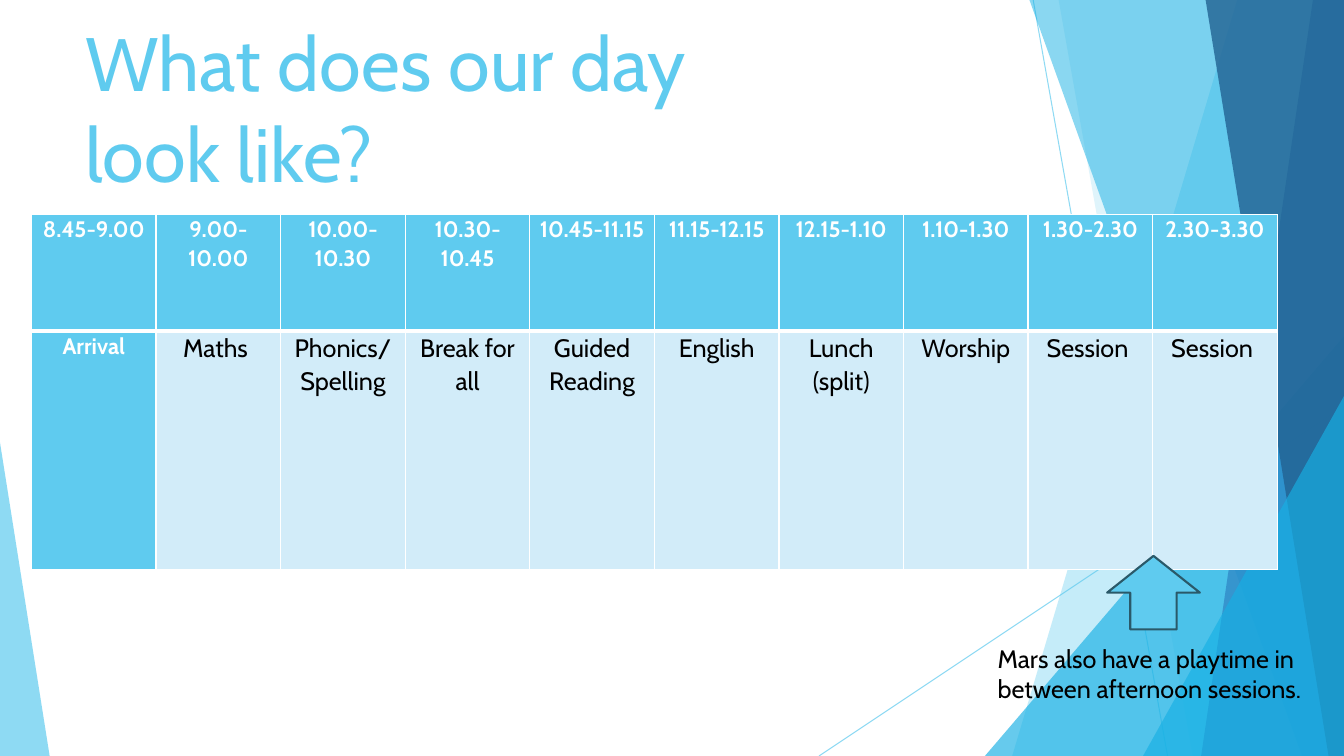
from lxml import etree
from pptx import Presentation
from pptx import util as u
from pptx.dml import color
from pptx.enum import shapes, text
from pptx.oxml import ns

COLORS = {
    "sky": "5FCBEF", "cyan": "17B0E4", "blue": "2E83C3", "navy": "226292",
    "pale": "D2ECF9", "outline": "2A5969", "white": "FFFFFF", "black": "000000",
}
FONT = "Cabin"
WIDTH, HEIGHT = 960, 540

# Facet bands: x at top left, x at bottom left, colour, opacity
WIDE_BANDS = [(884, 723, "sky", 36), (756, 852, "sky", 20)]
NARROW_BANDS = [(735, 930, "cyan", 50), (938, 858, "blue", 70), (861, 949, "navy", 80)]

TIMETABLE = [
    ("8.45-9.00", "Arrival"), ("9.00-10.00", "Maths "),
    ("10.00-10.30", "Phonics/ Spelling"), ("10.30-10.45", "Break for all"),
    ("10.45-11.15", "Guided Reading"), ("11.15-12.15", "English"),
    ("12.15-1.10", "Lunch (split)"), ("1.10-1.30", "Worship"),
    ("1.30-2.30", "Session "), ("2.30-3.30", "Session "),
]


def rgb(name):
    return color.RGBColor.from_string(COLORS[name])


class SlideBuilder:
    def __init__(self, slide):
        self.slide = slide
        self.shapes = slide.shapes

    def paint(self, shape, name, opacity=100):
        shape.fill.solid()
        shape.fill.fore_color.rgb = rgb(name)
        if opacity < 100:
            self.set_opacity(shape._element.spPr, opacity)

    def set_opacity(self, parent, opacity):
        color_element = next(parent.iter(ns.qn("a:srgbClr")))
        etree.SubElement(color_element, ns.qn("a:alpha"), val=str(opacity * 1000))

    def line(self, start, end):
        connector = self.shapes.add_connector(
            shapes.MSO_CONNECTOR.STRAIGHT, *map(u.Pt, start + end))
        connector.line.color.rgb = rgb("sky")
        connector.line.width = u.Pt(0.75)
        properties = connector._element.spPr
        self.set_opacity(properties, 70)
        etree.SubElement(properties, ns.qn("a:effectLst"))

    def band(self, top_x, bottom_x, name, opacity):
        """Draw a full-height facet reaching the right edge of the slide."""
        builder = self.shapes.build_freeform(top_x, -1, scale=u.Pt(1))
        builder.add_line_segments([(WIDTH, -1), (WIDTH, HEIGHT), (bottom_x, HEIGHT)])
        shape = builder.convert_to_shape()
        shape.shadow.inherit = False
        self.paint(shape, name, opacity)
        shape.line.fill.background()

    def preset(self, kind, box, name, opacity=100):
        shape = self.shapes.add_shape(kind, *map(u.Pt, box))
        shape.shadow.inherit = False
        self.paint(shape, name, opacity)
        shape.line.fill.background()
        return shape

    def triangle(self, box, apex, name, opacity):
        shape = self.preset(shapes.MSO_SHAPE.ISOSCELES_TRIANGLE, box, name, opacity)
        shape.adjustments[0] = apex

    def up_arrow(self, box):
        shape = self.preset(shapes.MSO_SHAPE.RIGHT_ARROW, box, "sky")
        shape.rotation = 270
        shape.line.color.rgb = rgb("outline")
        shape.line.width = u.Pt(1.5)

    def add_text(self, paragraph, words, size, name, bold=False):
        run = paragraph.add_run()
        run.text = words
        run.font.name = FONT
        run.font.size = u.Pt(size)
        run.font.bold = bold
        run.font.color.rgb = rgb(name)

    def text_box(self, box, words, size, name):
        frame = self.shapes.add_textbox(*map(u.Pt, box)).text_frame
        frame.word_wrap = True
        self.add_text(frame.paragraphs[0], words, size, name)

    def borders(self, cell, **widths):
        """Add white borders; the fill must already be set."""
        properties = cell._tc.get_or_add_tcPr()
        for index, (side, width) in enumerate(widths.items()):
            line = etree.Element(ns.qn(f"a:ln{side}"), w=str(u.Pt(width)))
            fill = etree.SubElement(line, ns.qn("a:solidFill"))
            etree.SubElement(fill, ns.qn("a:srgbClr"), val=COLORS["white"])
            properties.insert(index, line)

    def cell(self, cell, words, strong, top, bottom):
        cell.margin_left = cell.margin_right = u.Pt(5.4)
        cell.margin_top = cell.margin_bottom = 0
        self.paint(cell, "sky" if strong else "pale")
        self.borders(cell, L=1, R=1, T=top, B=bottom)
        paragraph = cell.text_frame.paragraphs[0]
        paragraph.alignment = text.PP_ALIGN.CENTER
        paragraph.line_spacing = 1.07
        if strong:
            self.add_text(paragraph, words, 16, "white", bold=True)
        else:
            self.add_text(paragraph, words, 18, "black")

    def timetable(self, left, top, column_width, row_heights):
        count = len(TIMETABLE)
        table = self.shapes.add_table(
            2, count, u.Pt(left), u.Pt(top),
            u.Pt(column_width * count), u.Pt(sum(row_heights))).table
        table.horz_banding = False
        for row, height in zip(table.rows, row_heights):
            row.height = u.Pt(height)
        for index, (time, activity) in enumerate(TIMETABLE):
            table.columns[index].width = u.Pt(column_width)
            self.cell(table.cell(0, index), time, True, top=1, bottom=3)
            self.cell(table.cell(1, index), activity, index == 0, top=3, bottom=1)


def main():
    presentation = Presentation()
    presentation.slide_width = u.Pt(WIDTH)
    presentation.slide_height = u.Pt(HEIGHT)
    builder = SlideBuilder(presentation.slides.add_slide(presentation.slide_layouts[6]))

    builder.line((738, 0), (834, HEIGHT))
    builder.line((WIDTH, 290), (585, HEIGHT))
    for band in WIDE_BANDS:
        builder.band(*band)
    builder.triangle((703.5, 240, 256.5, 300), 1, "cyan", 66)
    for band in NARROW_BANDS:
        builder.band(*band)
    builder.triangle((816.5, 283, 143.5, 257), 1, "cyan", 66)
    builder.triangle((0, 316, 35.5, 224), 0, "sky", 70)

    builder.text_box((54, 8, 540, 134), "What does our day look like?", 54, "sky")
    builder.timetable(22.5, 153.3, 89, (83, 170.5))
    builder.up_arrow((797.7, 390.2, 52.5, 66.2))
    builder.text_box((705.5, 456, 280, 51),
                     "Mars also have a playtime in between afternoon sessions.", 18, "black")
    presentation.save("out.pptx")


if __name__ == "__main__":
    main()
